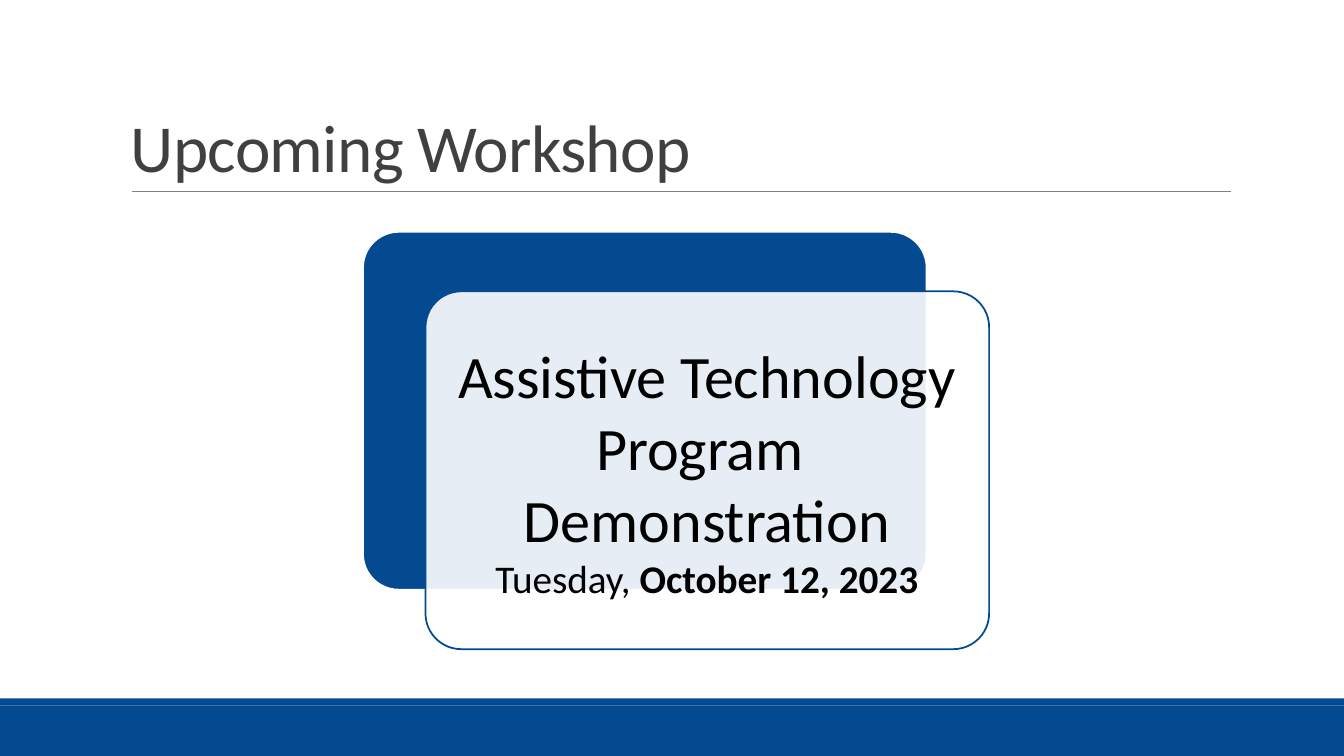
"""Build the Upcoming Workshop slide."""
from dataclasses import dataclass

from lxml import etree
from pptx import Presentation
from pptx.dml.color import RGBColor
from pptx.enum.shapes import MSO_CONNECTOR, MSO_SHAPE
from pptx.enum.text import MSO_ANCHOR, PP_ALIGN
from pptx.oxml.ns import qn
from pptx.slide import Slide
from pptx.util import Emu, Pt

PX = 9144
FONT = "Calibri"
COLORS = {"blue": "034A90", "white": "FFFFFF", "rule": "808080",
          "title": "404040", "text": "000000"}
RECT = MSO_SHAPE.RECTANGLE
ROUND = MSO_SHAPE.ROUNDED_RECTANGLE
STRAIGHT = MSO_CONNECTOR.STRAIGHT
MIDDLE, BOTTOM = MSO_ANCHOR.MIDDLE, MSO_ANCHOR.BOTTOM
LEFT, CENTER = PP_ALIGN.LEFT, PP_ALIGN.CENTER


@dataclass(frozen=True)
class Box:
    x: int
    y: int
    w: int
    h: int
    fill: str
    line: str = ""
    alpha: int = 100
    rounded: bool = False


@dataclass(frozen=True)
class Run:
    text: str
    size: int
    color: str = "text"
    bold: bool = False
    spacing: int = 0


@dataclass(frozen=True)
class Label:
    x: int
    y: int
    w: int
    h: int
    lines: tuple[tuple[Run, ...], ...]
    anchor: MSO_ANCHOR
    align: PP_ALIGN
    inset: tuple[int, int]
    line_spacing: float = 1.0


BOXES = (
    Box(0, 700, 1333, 50, "blue"),
    Box(0, 693, 1333, 7, "blue"),
    Box(360, 230, 559, 355, "blue", "white", rounded=True),
    Box(422, 289, 559, 355, "white", "blue", 90, True),
)
LABELS = (
    Label(120, 31, 1100, 159,
          ((Run("Upcoming Workshop", 48, "title", spacing=-50),),),
          BOTTOM, LEFT, (10, 5), 0.85),
    Label(432, 299, 538, 334,
          ((Run("Assistive Technology Program ", 43),),
           (Run("Demonstration", 43),),
           (Run("Tuesday, ", 28), Run("October 12, 2023", 28, bold=True))),
          MIDDLE, CENTER, (18, 18)),
)


def px(n: int) -> Emu:
    return Emu(n * PX)


def rgb(name: str) -> RGBColor:
    return RGBColor.from_string(COLORS[name])


def add_box(s: Slide, box: Box) -> None:
    sp = s.shapes.add_shape(ROUND if box.rounded else RECT,
                            px(box.x), px(box.y), px(box.w), px(box.h))
    sp.shadow.inherit = False
    if box.rounded:
        sp.adjustments[0] = 0.1
    sp.fill.solid()
    sp.fill.fore_color.rgb = rgb(box.fill)
    if box.alpha < 100:
        clr = sp.fill._xPr.find(qn("a:solidFill"))[0]
        etree.SubElement(clr, qn("a:alpha")).set("val", str(box.alpha * 1000))
    if box.line:
        sp.line.color.rgb = rgb(box.line)
        sp.line.width = Pt(1.25)
    else:
        sp.line.fill.background()


def add_rule(s: Slide, x1: int, x2: int, y: int) -> None:
    rule = s.shapes.add_connector(STRAIGHT, px(x1), px(y), px(x2), px(y))
    rule.line.color.rgb = rgb("rule")
    rule.line.width = Pt(0.5)
    etree.SubElement(rule._element.spPr, qn("a:effectLst"))


def add_label(s: Slide, label: Label) -> None:
    sp = s.shapes.add_textbox(px(label.x), px(label.y), px(label.w), px(label.h))
    tf = sp.text_frame
    tf.word_wrap = True
    tf.vertical_anchor = label.anchor
    tf.margin_left = tf.margin_right = px(label.inset[0])
    tf.margin_top = tf.margin_bottom = px(label.inset[1])
    p = tf.paragraphs[0]
    p.alignment = label.align
    p.line_spacing = label.line_spacing
    for i, line in enumerate(label.lines):
        if i:
            p.add_line_break()
        for run in line:
            r = p.add_run()
            r.text = run.text
            r.font.name = FONT
            r.font.size = Pt(run.size)
            r.font.bold = run.bold
            r.font.color.rgb = rgb(run.color)
            if run.spacing:
                r.font._element.set("spc", str(run.spacing))


def main() -> None:
    prs = Presentation()
    prs.slide_width, prs.slide_height = px(1333), px(750)
    s = prs.slides.add_slide(prs.slide_layouts[6])
    for box in BOXES:
        add_box(s, box)
    add_rule(s, 131, 1221, 190)
    for label in LABELS:
        add_label(s, label)
    prs.save("out.pptx")


if __name__ == "__main__":
    main()
